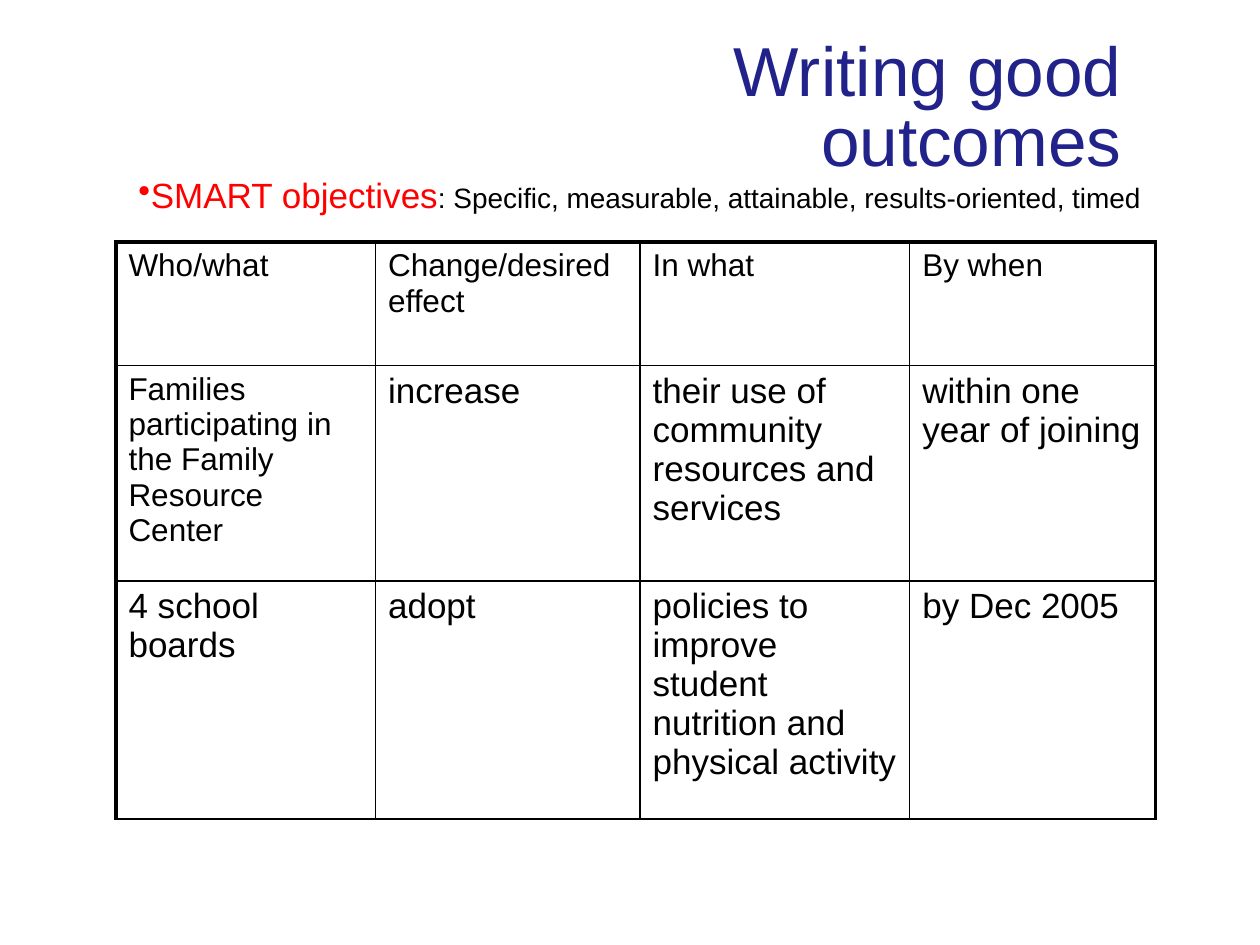
from lxml import etree
from pptx import Presentation
from pptx import util as u
from pptx.dml.color import RGBColor
from pptx.enum import text
from pptx.oxml.ns import qn

NAVY = RGBColor(0x22, 0x22, 0x8B)
RED = RGBColor(0xFF, 0x00, 0x00)
BLACK = RGBColor(0x00, 0x00, 0x00)


def style(span, size, color):
    span.font.name = "Arial"
    span.font.size = u.Pt(size)
    span.font.color.rgb = color


def add_border(cell, position, side, width):
    line = etree.Element(qn(f"a:ln{side}"), w=str(u.Pt(width)))
    fill = etree.SubElement(line, qn("a:solidFill"))
    etree.SubElement(fill, qn("a:srgbClr"), val=str(BLACK))
    cell._tc.get_or_add_tcPr().insert(position, line)


deck = Presentation()
deck.slide_width = u.Inches(10)
deck.slide_height = u.Inches(7.5)
page = deck.slides.add_slide(deck.slide_layouts[6])

title = page.shapes.add_textbox(u.Inches(3.83), u.Inches(0.25), u.Inches(5.17), u.Inches(1.25))
title.text_frame.word_wrap = True
title.text_frame.vertical_anchor = text.MSO_ANCHOR.MIDDLE
title.text_frame.text = "Writing good outcomes"
para = title.text_frame.paragraphs[0]
para.alignment = text.PP_ALIGN.RIGHT
para.line_spacing = 0.84
style(para.runs[0], 39.6, NAVY)

objectives = page.shapes.add_textbox(u.Inches(1), u.Inches(1.33), u.Inches(8.33), u.Inches(0.67))
objectives.text_frame.word_wrap = True
para = objectives.text_frame.paragraphs[0]
bullet = etree.SubElement(para._p.get_or_add_pPr(), qn("a:buChar"))
bullet.set("char", "•")
for words, size, color in [
    ("SMART objectives", 20, RED),
    (": Specific, measurable, attainable, results-oriented, timed", 16, BLACK),
]:
    span = para.add_run()
    span.text = words
    style(span, size, color)

rows = [
    ["Who/what", "Change/desired effect", "In what", "By when"],
    ["Families participating in the Family Resource Center", "increase",
     "their use of community resources and services", "within one year of joining"],
    ["4 school boards", "adopt",
     "policies to improve student nutrition and physical activity", "by Dec 2005"],
]
widths = [2.06, 2.1, 2.14, 1.95]
heights = [0.98, 1.71, 1.89]
table = page.shapes.add_table(
    len(rows), len(widths), u.Inches(0.92), u.Inches(1.92), u.Inches(8.25), u.Inches(4.58)
).table
for column, width in zip(table.columns, widths):
    column.width = u.Inches(width)
for row, height in zip(table.rows, heights):
    row.height = u.Inches(height)

for i, row in enumerate(rows):
    for j, words in enumerate(row):
        cell = table.cell(i, j)
        cell.fill.background()
        cell.text_frame.text = words
        small = i == 0 or (i, j) == (1, 0)
        style(cell.text_frame.paragraphs[0].runs[0], 18 if small else 20, BLACK)
        outer = {"L": j == 0, "R": j == len(widths) - 1, "T": i == 0, "B": False}
        for position, (side, thick) in enumerate(outer.items()):
            add_border(cell, position, side, 2.25 if thick else 1)

deck.save("out.pptx")
